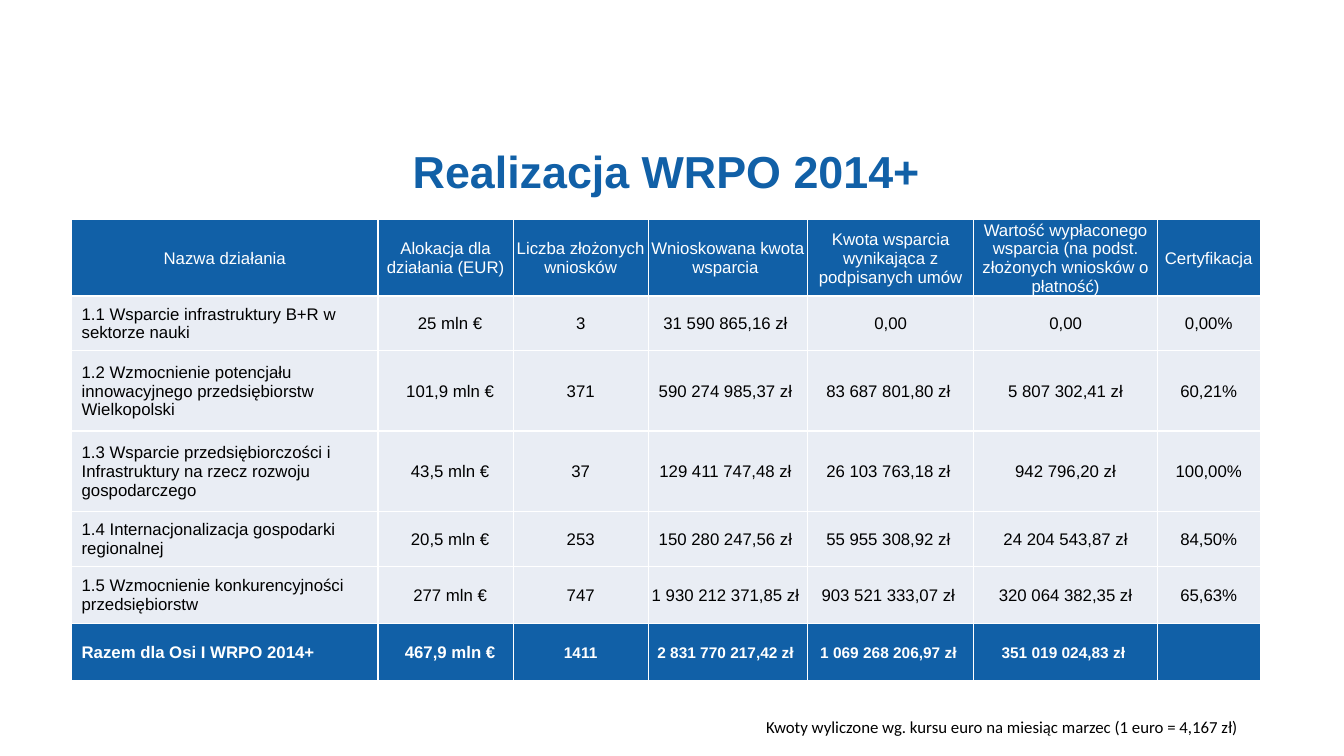
from dataclasses import dataclass

from lxml import etree
from pptx import Presentation
from pptx.dml.color import RGBColor
from pptx.enum.text import MSO_ANCHOR, MSO_AUTO_SIZE, PP_ALIGN
from pptx.oxml.ns import qn
from pptx.util import Inches, Pt

LEFT = PP_ALIGN.LEFT
CENTER = PP_ALIGN.CENTER
MIDDLE = MSO_ANCHOR.MIDDLE
NO_AUTOFIT = MSO_AUTO_SIZE.NONE
GROW = MSO_AUTO_SIZE.SHAPE_TO_FIT_TEXT
TITLE_ONLY_LAYOUT = 5


@dataclass(frozen=True)
class Theme:
    blue: str = "1160A7"
    pale: str = "E9EDF4"
    white: str = "FFFFFF"
    black: str = "000000"
    font: str = "Arial"
    note_font: str = "Calibri"
    title_size: int = 32
    text_size: int = 12
    total_size: int = 11
    border_width: int = 1


THEME = Theme()

COLUMN_WIDTHS = [3.04, 1.34, 1.34, 1.58, 1.65, 1.82, 1.02]
ROW_HEIGHTS = [0.64, 0.54, 0.8, 0.8, 0.54, 0.57, 0.57]

HEADERS = [
    "Nazwa działania",
    "Alokacja dla działania (EUR)",
    "Liczba złożonych wniosków",
    "Wnioskowana kwota wsparcia ",
    "Kwota wsparcia wynikająca z podpisanych umów",
    "Wartość wypłaconego wsparcia (na podst. złożonych wniosków o płatność)",
    "Certyfikacja",
]
MEASURES = [
    ["1.1 Wsparcie infrastruktury B+R w sektorze nauki", "25 mln €", "3",
     "31 590 865,16 zł ", "0,00", "0,00", "0,00%"],
    ["1.2 Wzmocnienie potencjału innowacyjnego przedsiębiorstw Wielkopolski", "101,9 mln €", "371",
     "590 274 985,37 zł ", "83 687 801,80 zł ", "5 807 302,41 zł", "60,21%"],
    ["1.3 Wsparcie przedsiębiorczości i Infrastruktury na rzecz rozwoju gospodarczego", "43,5 mln €", "37",
     "129 411 747,48 zł ", "26 103 763,18 zł ", "942 796,20 zł", "100,00%"],
    ["1.4 Internacjonalizacja gospodarki regionalnej", "20,5 mln €", "253",
     "150 280 247,56 zł ", "55 955 308,92 zł ", "24 204 543,87 zł", "84,50%"],
    ["1.5 Wzmocnienie konkurencyjności przedsiębiorstw", "277 mln €", "747",
     "1 930 212 371,85 zł ", "903 521 333,07 zł ", "320 064 382,35 zł", "65,63%"],
]
TOTALS = ["Razem dla Osi I WRPO 2014+", "467,9 mln €", "1411",
          "2 831 770 217,42 zł ", "1 069 268 206,97 zł ", "351 019 024,83 zł ", ""]


def add_run(paragraph, text, size, color, font=THEME.font, bold=False):
    run = paragraph.add_run()
    run.text = text
    run.font.name = font
    run.font.size = Pt(size)
    run.font.bold = bold
    run.font.color.rgb = RGBColor.from_string(color)


def add_title(slide, text):
    title = slide.shapes.title
    title.left, title.top = Inches(0.61), Inches(1.07)
    title.width, title.height = Inches(12), Inches(1.25)
    title.text_frame.auto_size = NO_AUTOFIT
    title.text_frame.vertical_anchor = MIDDLE
    paragraph = title.text_frame.paragraphs[0]
    paragraph.alignment = CENTER
    add_run(paragraph, text, THEME.title_size, THEME.blue, bold=True)


def set_borders(cell):
    properties = cell._tc.get_or_add_tcPr()
    for side in ("lnL", "lnR", "lnT", "lnB"):
        line = etree.SubElement(properties, qn(f"a:{side}"), w=str(Pt(THEME.border_width)))
        fill = etree.SubElement(line, qn("a:solidFill"))
        etree.SubElement(fill, qn("a:srgbClr"), val=THEME.white)


def fill_cell(cell, text, background, color, size, alignment, indent, bold):
    set_borders(cell)
    cell.fill.solid()
    cell.fill.fore_color.rgb = RGBColor.from_string(background)
    cell.vertical_anchor = MIDDLE
    cell.margin_left = Inches(indent)
    cell.margin_right = cell.margin_top = Inches(0.01)
    cell.margin_bottom = 0
    if text:
        paragraph = cell.text_frame.paragraphs[0]
        paragraph.alignment = alignment
        add_run(paragraph, text, size, color, bold=bold)


def add_measures_table(slide):
    rows = [HEADERS, *MEASURES, TOTALS]
    last = len(rows) - 1
    table = slide.shapes.add_table(
        len(rows), len(HEADERS), Inches(0.71), Inches(2.18),
        Inches(sum(COLUMN_WIDTHS)), Inches(sum(ROW_HEIGHTS)),
    ).table
    for column, width in zip(table.columns, COLUMN_WIDTHS):
        column.width = Inches(width)
    for row_index, (texts, height) in enumerate(zip(rows, ROW_HEIGHTS)):
        table.rows[row_index].height = Inches(height)
        is_header, is_total = row_index == 0, row_index == last
        dark = is_header or is_total
        for column_index, text in enumerate(texts):
            fill_cell(
                table.cell(row_index, column_index),
                text,
                background=THEME.blue if dark else THEME.pale,
                color=THEME.white if dark else THEME.black,
                size=THEME.total_size if is_total and column_index > 1 else THEME.text_size,
                alignment=LEFT if column_index == 0 and not is_header else CENTER,
                indent=0.1 if column_index < 2 and not is_header else 0.01,
                bold=is_total,
            )


def add_note(slide, text):
    note = slide.shapes.add_textbox(Inches(7.5), Inches(7.06), Inches(5.01), Inches(0.3))
    note.text_frame.word_wrap = True
    note.text_frame.auto_size = GROW
    add_run(note.text_frame.paragraphs[0], text, THEME.text_size, THEME.black, THEME.note_font)


def main():
    presentation = Presentation()
    presentation.slide_width = Inches(13.33)
    presentation.slide_height = Inches(7.5)
    slide = presentation.slides.add_slide(presentation.slide_layouts[TITLE_ONLY_LAYOUT])
    add_title(slide, "Realizacja WRPO 2014+")
    add_measures_table(slide)
    add_note(slide, "Kwoty wyliczone wg. kursu euro na miesiąc marzec (1 euro = 4,167 zł)")
    presentation.save("out.pptx")


if __name__ == "__main__":
    main()
